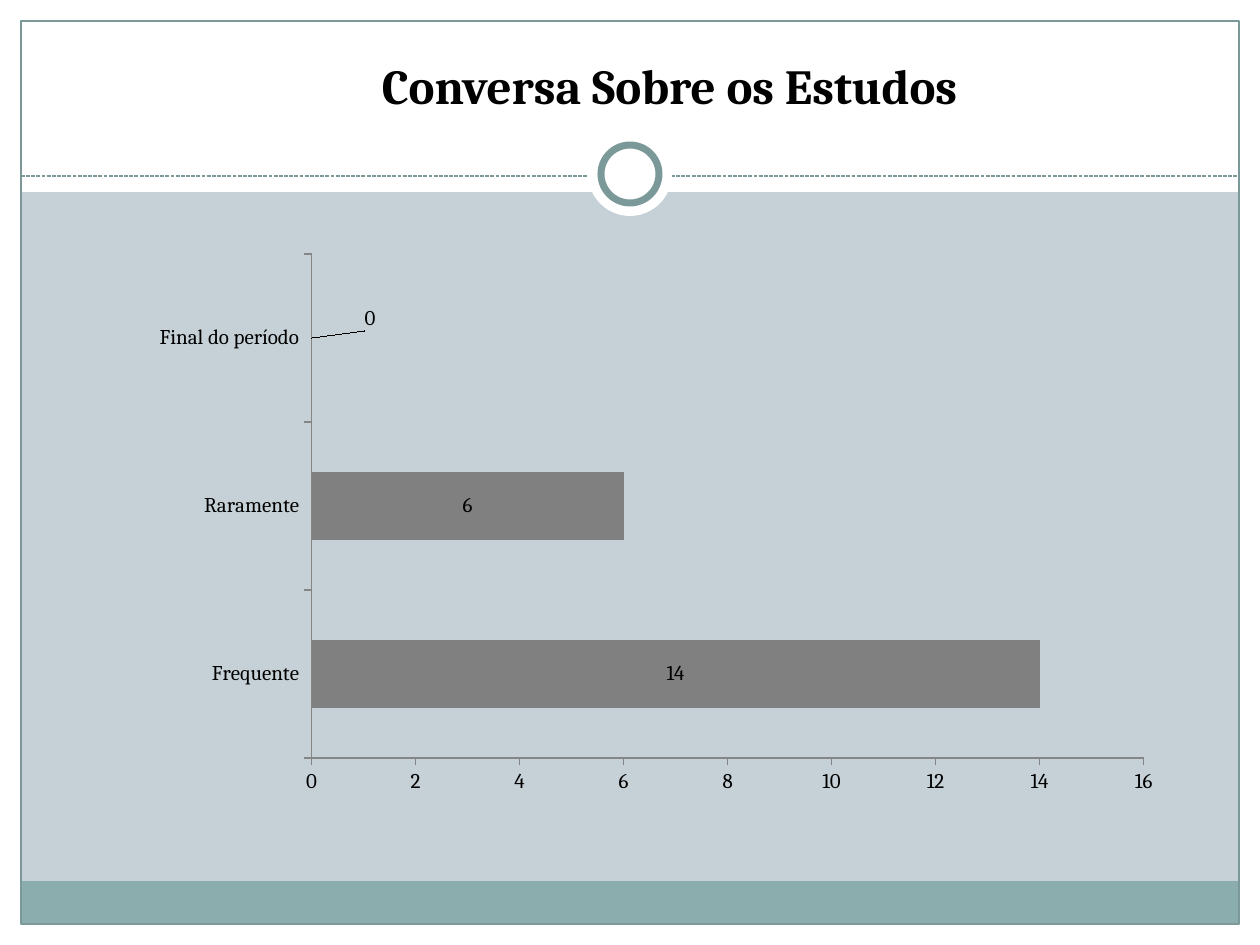
from lxml import etree
from pptx import Presentation
from pptx.chart.data import CategoryChartData
from pptx.dml.color import RGBColor
from pptx.enum.chart import XL_CHART_TYPE, XL_LABEL_POSITION, XL_TICK_MARK
from pptx.enum.dml import MSO_LINE
from pptx.enum.shapes import MSO_CONNECTOR, MSO_SHAPE
from pptx.enum.text import MSO_ANCHOR, PP_ALIGN
from pptx.oxml.ns import qn
from pptx.util import Emu, Pt

RECT, OVAL = MSO_SHAPE.RECTANGLE, MSO_SHAPE.OVAL
LINE, DASH = MSO_CONNECTOR.STRAIGHT, MSO_LINE.SQUARE_DOT
BAR, MID = XL_CHART_TYPE.BAR_STACKED, XL_LABEL_POSITION.CENTER
OUT, CENTER, MIDDLE = XL_TICK_MARK.OUTSIDE, PP_ALIGN.CENTER, MSO_ANCHOR.MIDDLE
FONT = "Cambria"
WHITE, BLACK, GREY, AXIS = "FFFFFF", "000000", "808080", "868686"
TEAL, RIM, BACK = "8CADAE", "7C999A", "C5D1D7"
WIDE, HIGH, EDGE = 1260, 945, 21


def px(n):
    """Turn pixels into EMU."""
    return Emu(n * 914400 // 126)


def rgb(code):
    """Turn a hex string into a colour."""
    return RGBColor.from_string(code)


def paint(fill, code):
    """Fill with one solid colour."""
    fill.solid()
    fill.fore_color.rgb = rgb(code)


def style(font, size, bold=False):
    """Set the slide's typeface in black."""
    font.name, font.size, font.bold = FONT, Pt(size), bold
    font.color.rgb = rgb(BLACK)


def add_form(slide, kind, box, fill=None, line=None, width=0.75):
    """Add a flat shape with an optional fill and outline."""
    form = slide.shapes.add_shape(kind, *map(px, box))
    form.shadow.inherit = False
    if fill:
        paint(form.fill, fill)
    else:
        form.fill.background()
    if line:
        form.line.color.rgb = rgb(line)
        form.line.width = Pt(width)
    else:
        form.line.fill.background()


def add_frame(slide, box):
    """Draw the white margins, the header, the footer band and the border."""
    x, y, w, h = box
    head, foot = 192, 43
    right, low = x + w - EDGE, y + h - EDGE
    for part in ((x, low, w, EDGE), (x, y, w, head),
                 (x, y, EDGE, h), (right, y, EDGE, h)):
        add_form(slide, RECT, part, WHITE)
    inner = w - 2 * EDGE
    add_form(slide, RECT, (x + EDGE, low - foot, inner, foot), TEAL)
    add_form(slide, RECT, (x + EDGE, y + EDGE, inner, h - 2 * EDGE), line=RIM)


def add_rule(slide, box):
    """Draw the dashed rule with the ring at its middle."""
    x, y, w, h = box
    rule = slide.shapes.add_connector(
        LINE, px(x), px(y + 44), px(x + w), px(y + 44))
    rule.line.color.rgb = rgb(RIM)
    rule.line.width = Pt(0.75)
    rule.line.dash_style = DASH
    etree.SubElement(rule.element.spPr, qn("a:effectLst"))
    mid = x + w // 2
    add_form(slide, OVAL, (mid - h // 2, y, h, h), WHITE)
    ring = h - 26
    add_form(slide, OVAL, (mid - ring // 2, y + 13, ring, ring), WHITE, RIM, 4)


def add_title(slide, box):
    """Place the title in front of the header."""
    title = slide.shapes.title
    title.left, title.top, title.width, title.height = map(px, box)
    frame = title.text_frame
    frame.text = "Conversa Sobre os Estudos "
    frame.vertical_anchor = MIDDLE
    frame.word_wrap = True
    para = frame.paragraphs[0]
    para.alignment = CENTER
    style(para.runs[0].font, 28, True)
    title.element.getparent().append(title.element)


def set_layout(node, place, **vals):
    """Give a chart part a manual layout."""
    for old in node.findall(qn("c:layout")):
        node.remove(old)
    layout = etree.Element(qn("c:layout"))
    manual = etree.SubElement(layout, qn("c:manualLayout"))
    for key, val in vals.items():
        etree.SubElement(manual, qn("c:" + key)).set("val", str(val))
    node.insert(place, layout)


def add_bars(slide, box):
    """Add the bar chart with its labels and axes."""
    data = CategoryChartData()
    data.categories = ["Frequente", "Raramente", "Final do período"]
    data.add_series("Series 1", (14, 6, 0))
    chart = slide.shapes.add_chart(BAR, *map(px, box), data).chart
    chart.has_legend = chart.has_title = False
    style(chart.font, 12)
    for axis in (chart.category_axis, chart.value_axis):
        axis.has_major_gridlines = False
        axis.major_tick_mark = OUT
        axis.format.line.color.rgb = rgb(AXIS)
        style(axis.tick_labels.font, 12)
    scale = chart.value_axis
    scale.minimum_scale, scale.maximum_scale, scale.major_unit = 0, 16, 2
    plot = chart.plots[0]
    plot.gap_width, plot.overlap, plot.vary_by_categories = 150, 100, False
    bars = plot.series[0]
    paint(bars.format.fill, GREY)
    labels = bars.data_labels
    labels.show_value, labels.position = True, MID
    style(labels.font, 12)
    last = bars.points[2].data_label
    last.position = MID
    style(last.font, 12)
    root = chart.element
    set_layout(next(root.iter(qn("c:dLbl"))), 1, x=0.05, y=-0.03)
    set_layout(next(root.iter(qn("c:plotArea"))), 0, layoutTarget="inner",
               xMode="edge", yMode="edge", x=0.23, y=0.07, w=0.71, h=0.8)


def main():
    """Build and save the slide."""
    deck = Presentation()
    deck.slide_width, deck.slide_height = px(WIDE), px(HIGH)
    slide = deck.slides.add_slide(deck.slide_layouts[5])
    paint(slide.background.fill, BACK)
    add_frame(slide, (0, 0, WIDE, HIGH))
    add_rule(slide, (EDGE, 132, WIDE - 2 * EDGE, 84))
    add_bars(slide, (42, 210, 1172, 630))
    add_title(slide, (276, 49, 798, 72))
    deck.save("out.pptx")


if __name__ == "__main__":
    main()
